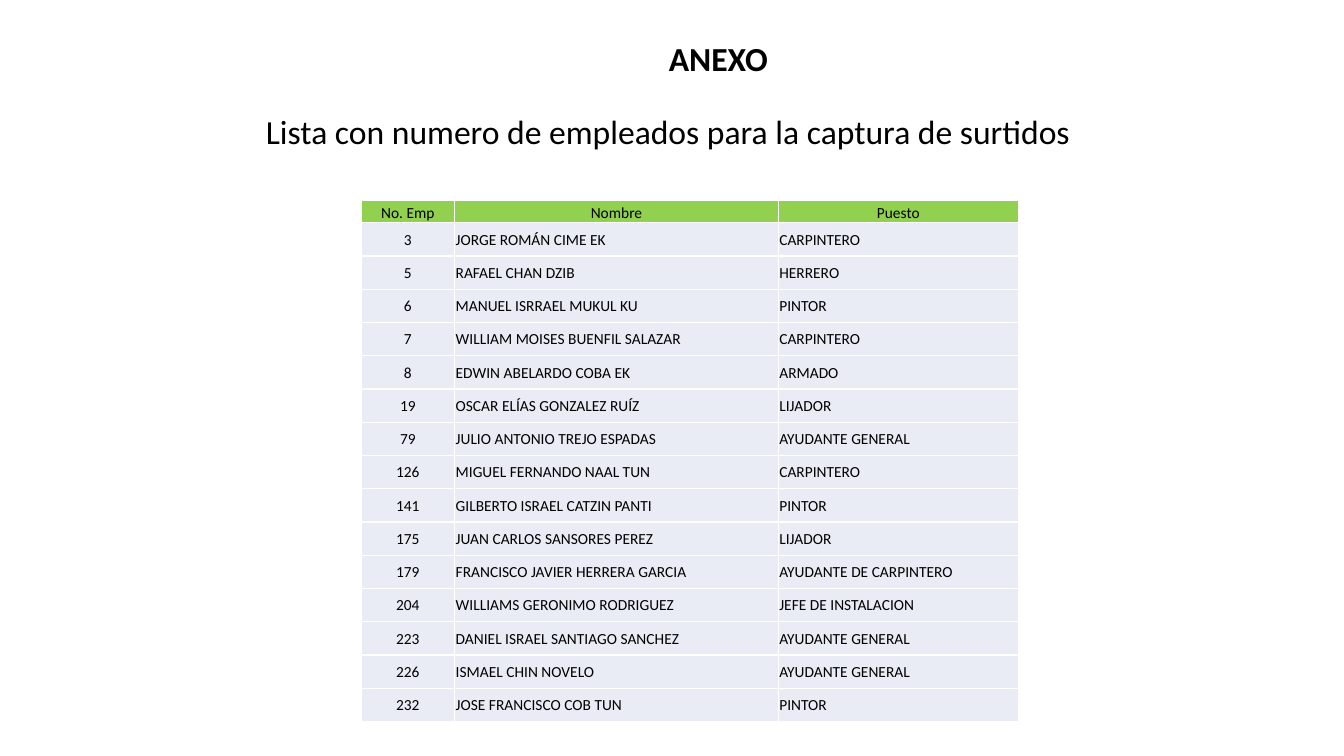
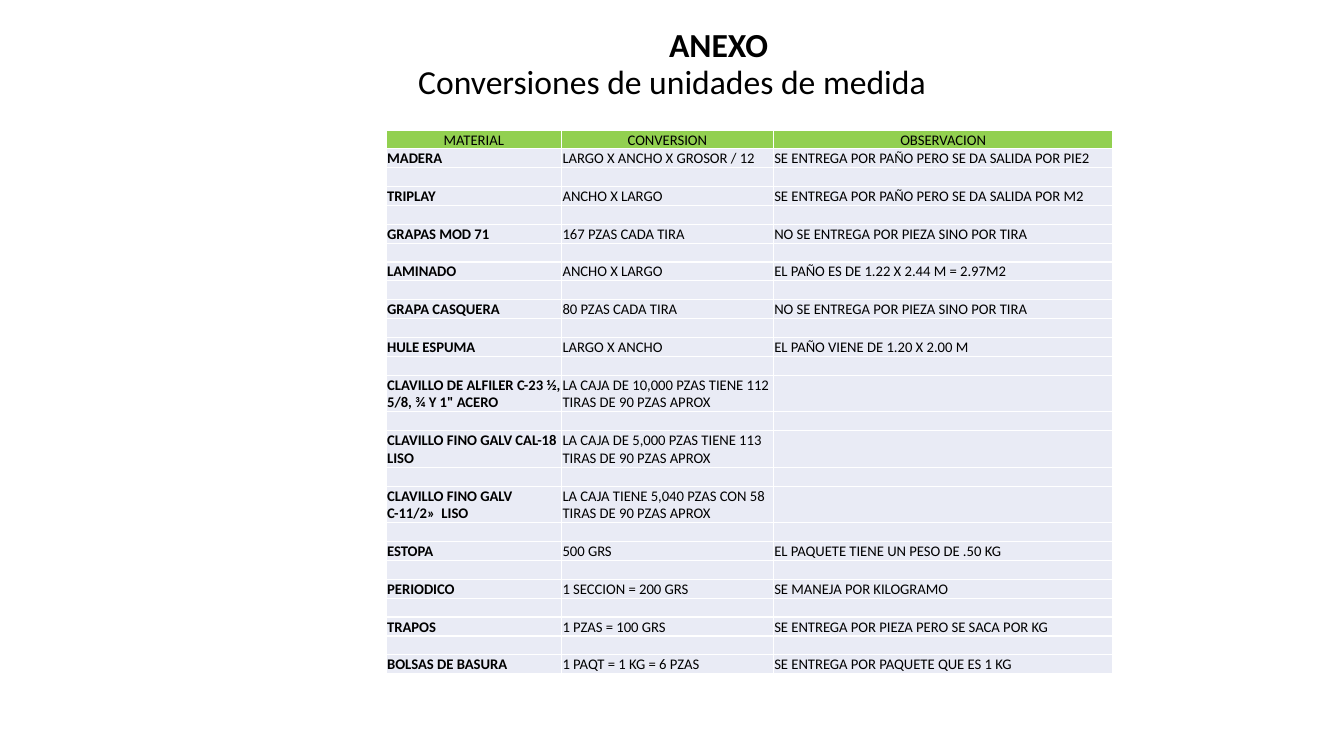
"""Build the two annex slides: employee list and unit conversions."""
from dataclasses import dataclass

from lxml import etree
from pptx import Presentation
from pptx.dml.color import RGBColor
from pptx.enum.text import MSO_ANCHOR, MSO_AUTO_SIZE, PP_ALIGN
from pptx.oxml.ns import qn
from pptx.util import Pt

PX = 9144
SLIDE_WIDTH, SLIDE_HEIGHT = 1333, 750
TITLE_ONLY = 5
FONT = "Calibri"
TITLE_SIZE = 24
TITLE_TAB = 100
CELL_INSET = 1
BORDER_SIDES = ("a:lnL", "a:lnR", "a:lnT", "a:lnB")
COLORS = {"text": "000000", "header": "92D050", "body": "E9EBF5", "border": "FFFFFF"}
LEFT, CENTER = PP_ALIGN.LEFT, PP_ALIGN.CENTER
MIDDLE, BOTTOM = MSO_ANCHOR.MIDDLE, MSO_ANCHOR.BOTTOM
NO_AUTOFIT = MSO_AUTO_SIZE.NONE

Row = tuple[str, str, str]


@dataclass(frozen=True)
class Box:
    """Position and size in px."""
    left: int
    top: int
    width: int
    height: int


@dataclass(frozen=True)
class Listing:
    """Contents and format of one table."""
    left: int
    top: int
    columns: tuple[int, int, int]
    header: Row
    rows: list[Row]
    header_height: int
    row_height: int
    tall_height: int
    size: float
    header_anchor: MSO_ANCHOR
    body_anchor: MSO_ANCHOR
    key_align: PP_ALIGN
    key_bold: bool


@dataclass(frozen=True)
class Annex:
    """One slide: heading, subtitle and table."""
    title_box: Box
    heading: str
    subtitle: str
    subtitle_gap: int
    listing: Listing


EMPLOYEES: list[Row] = [
    ("3", "JORGE ROMÁN CIME EK", "CARPINTERO"),
    ("5", "RAFAEL CHAN DZIB", "HERRERO"),
    ("6", "MANUEL ISRRAEL MUKUL KU", "PINTOR"),
    ("7", "WILLIAM MOISES BUENFIL SALAZAR", "CARPINTERO"),
    ("8", "EDWIN ABELARDO COBA EK", "ARMADO"),
    ("19", "OSCAR ELÍAS GONZALEZ RUÍZ", "LIJADOR"),
    ("79", "JULIO ANTONIO TREJO ESPADAS", "AYUDANTE GENERAL"),
    ("126", "MIGUEL FERNANDO NAAL TUN", "CARPINTERO"),
    ("141", "GILBERTO ISRAEL CATZIN PANTI", "PINTOR"),
    ("175", "JUAN CARLOS SANSORES PEREZ", "LIJADOR"),
    ("179", "FRANCISCO JAVIER HERRERA GARCIA", "AYUDANTE DE CARPINTERO"),
    ("204", "WILLIAMS GERONIMO RODRIGUEZ", "JEFE DE INSTALACION"),
    ("223", "DANIEL ISRAEL SANTIAGO SANCHEZ", "AYUDANTE GENERAL"),
    ("226", "ISMAEL CHIN NOVELO", "AYUDANTE GENERAL"),
    ("232", "JOSE FRANCISCO COB TUN", "PINTOR"),
]

MATERIALS: list[Row] = [
    ("MADERA", "LARGO X ANCHO X GROSOR / 12", "SE ENTREGA POR PAÑO PERO SE DA SALIDA POR PIE2"),
    ("TRIPLAY", "ANCHO X LARGO", "SE ENTREGA POR PAÑO PERO SE DA SALIDA POR M2"),
    ("GRAPAS MOD 71", "167 PZAS CADA TIRA", "NO SE ENTREGA POR PIEZA SINO POR TIRA"),
    ("LAMINADO", "ANCHO X LARGO", "EL PAÑO ES DE 1.22 X 2.44 M = 2.97M2"),
    ("GRAPA CASQUERA", "80 PZAS CADA TIRA", "NO SE ENTREGA POR PIEZA SINO POR TIRA"),
    ("HULE ESPUMA", "LARGO X ANCHO", "EL PAÑO VIENE DE 1.20 X 2.00 M"),
    ("CLAVILLO DE ALFILER C-23 ½, 5/8, ¾ Y 1\" ACERO",
     "LA CAJA DE 10,000 PZAS TIENE 112 TIRAS DE 90 PZAS APROX", ""),
    ("CLAVILLO FINO GALV CAL-18 LISO",
     "LA CAJA DE 5,000 PZAS TIENE 113 TIRAS DE 90 PZAS APROX", ""),
    ("CLAVILLO FINO GALV C-11/2»  LISO",
     "LA CAJA TIENE 5,040 PZAS CON 58 TIRAS DE 90 PZAS APROX", ""),
    ("ESTOPA", "500 GRS", "EL PAQUETE TIENE UN PESO DE .50 KG"),
    ("PERIODICO", "1 SECCION = 200 GRS", "SE MANEJA POR KILOGRAMO"),
    ("TRAPOS", "1 PZAS = 100 GRS", "SE ENTREGA POR PIEZA PERO SE SACA POR KG"),
    ("BOLSAS DE BASURA", "1 PAQT = 1 KG = 6 PZAS", "SE ENTREGA POR PAQUETE QUE ES 1 KG"),
]


def spaced(rows: list[Row]) -> list[Row]:
    """Put an empty row between each two rows."""
    return [line for row in rows for line in (row, ("", "", ""))][:-1]


ANNEXES = [
    Annex(
        Box(20, 24, 1285, 145), "ANEXO",
        "Lista con numero de empleados para la captura de surtidos", 26,
        Listing(358, 199, (93, 321, 238), ("No. Emp", "Nombre", "Puesto"), EMPLOYEES,
                22, 33, 33, 11, BOTTOM, MIDDLE, CENTER, False),
    ),
    Annex(
        Box(24, 0, 1285, 129), "ANEXO ", "Conversiones de unidades de medida", 0,
        Listing(383, 129, (174, 210, 337), ("MATERIAL", "CONVERSION", "OBSERVACION"),
                spaced(MATERIALS), 18, 18, 36, 10.5, MIDDLE, BOTTOM, LEFT, True),
    ),
]


def write_text(paragraph, text: str, *, size: float, bold: bool = False,
               align: PP_ALIGN = LEFT, space_before: int = 0,
               line_spacing: float = 1.0) -> None:
    """Fill a paragraph with formatted text."""
    paragraph.alignment = align
    paragraph.line_spacing = line_spacing
    if space_before:
        paragraph.space_before = Pt(space_before)
    if not text:
        etree.SubElement(paragraph._p, qn("a:endParaRPr"), sz=str(int(size * 100)))
        return
    run = paragraph.add_run()
    run.text = text
    run.font.name = FONT
    run.font.size = Pt(size)
    run.font.bold = bold
    run.font.color.rgb = RGBColor.from_string(COLORS["text"])


def draw_title(slide, annex: Annex) -> None:
    """Place the title and write its heading and subtitle."""
    title, box = slide.shapes.title, annex.title_box
    title.left, title.top = box.left * PX, box.top * PX
    title.width, title.height = box.width * PX, box.height * PX
    frame = title.text_frame
    frame.word_wrap = True
    frame.auto_size = NO_AUTOFIT
    frame.vertical_anchor = MIDDLE
    heading = frame.paragraphs[0]
    tabs = etree.SubElement(heading._p.get_or_add_pPr(), qn("a:tabLst"))
    etree.SubElement(tabs, qn("a:tab"), pos=str(TITLE_TAB * PX), algn="l")
    write_text(heading, "\t" + annex.heading, size=TITLE_SIZE, bold=True,
               align=CENTER, line_spacing=0.9)
    write_text(frame.add_paragraph(), annex.subtitle, size=TITLE_SIZE, align=CENTER,
               space_before=annex.subtitle_gap, line_spacing=0.9)


def style_cell(cell, fill: str, anchor: MSO_ANCHOR) -> None:
    """Set the borders, fill, insets and anchor of a cell."""
    properties = cell._tc.get_or_add_tcPr()
    for side in BORDER_SIDES:
        line = etree.SubElement(properties, qn(side), w=str(Pt(1)))
        solid = etree.SubElement(line, qn("a:solidFill"))
        etree.SubElement(solid, qn("a:srgbClr"), val=COLORS["border"])
    cell.fill.solid()
    cell.fill.fore_color.rgb = RGBColor.from_string(COLORS[fill])
    cell.margin_left = cell.margin_right = cell.margin_top = CELL_INSET * PX
    cell.margin_bottom = 0
    cell.vertical_anchor = anchor


def draw_listing(slide, listing: Listing) -> None:
    """Draw a table with a header row and body rows."""
    tall = [bool(row[0]) and not row[-1] for row in listing.rows]
    heights = [listing.header_height] + [
        listing.tall_height if is_tall else listing.row_height for is_tall in tall]
    table = slide.shapes.add_table(
        len(heights), len(listing.columns), listing.left * PX, listing.top * PX,
        sum(listing.columns) * PX, sum(heights) * PX).table
    table.first_row = False
    table.horz_banding = False
    for column, width in zip(table.columns, listing.columns):
        column.width = width * PX
    for row, height in zip(table.rows, heights):
        row.height = height * PX
    for row_index, texts in enumerate([listing.header, *listing.rows]):
        is_header = row_index == 0
        for column_index, text in enumerate(texts):
            is_key = column_index == 0 and not is_header
            cell = table.cell(row_index, column_index)
            style_cell(cell, "header" if is_header else "body",
                       listing.header_anchor if is_header else listing.body_anchor)
            align = CENTER if is_header else listing.key_align if is_key else LEFT
            write_text(cell.text_frame.paragraphs[0], text, size=listing.size,
                       bold=is_key and listing.key_bold, align=align)


def main() -> None:
    """Build and save the presentation."""
    presentation = Presentation()
    presentation.slide_width = SLIDE_WIDTH * PX
    presentation.slide_height = SLIDE_HEIGHT * PX
    for annex in ANNEXES:
        slide = presentation.slides.add_slide(presentation.slide_layouts[TITLE_ONLY])
        draw_title(slide, annex)
        draw_listing(slide, annex.listing)
    presentation.save("out.pptx")


if __name__ == "__main__":
    main()
